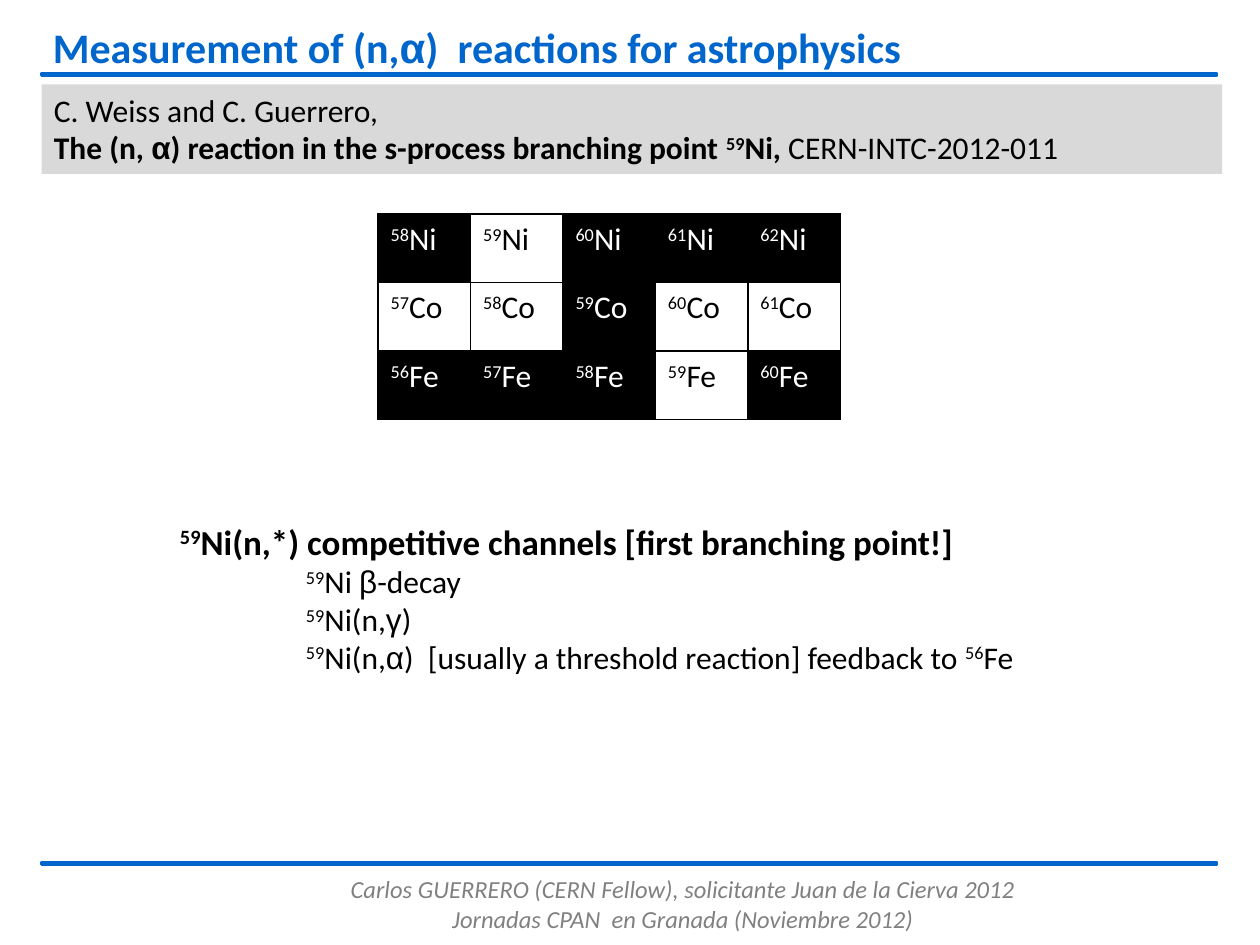
from itertools import groupby
from lxml.etree import SubElement
from pptx import Presentation
from pptx.dml.color import RGBColor
from pptx.enum.shapes import MSO_SHAPE
from pptx.enum.text import MSO_ANCHOR, PP_ALIGN
from pptx.oxml.ns import qn
from pptx.util import Inches, Pt

BLUE, BLACK, WHITE, GRAY, SILVER = "0066CC", "000000", "FFFFFF", "808080", "D9D9D9"


def color(value):
    return RGBColor.from_string(value)


def write(para, text, size, ink=BLACK, bold=False, italic=False):
    # Text between carets is superscript; Greek letters are set in Arial.
    for index, part in enumerate(text.split("^")):
        for greek, letters in groupby(part, lambda letter: letter in "αβγ"):
            span = para.add_run()
            span.text = "".join(letters)
            span.font.name = "Arial" if greek else "Calibri"
            span.font.size = Pt(size)
            span.font.bold = bold
            span.font.italic = italic
            span.font.color.rgb = color(ink)
            if index % 2:
                span.font._element.set("baseline", "30000")


deck = Presentation()
deck.slide_width, deck.slide_height = Inches(10), Inches(7.5)
page = deck.slides.add_slide(deck.slide_layouts[6])

for top, height, fill, border in [(6.84, 0.02, BLUE, True), (0.58, 0.02, BLUE, True), (0.67, 0.71, SILVER, False)]:
    width = 9.33 if border else 9.37
    bar = page.shapes.add_shape(MSO_SHAPE.RECTANGLE, Inches(0.33), Inches(top), Inches(width), Inches(height))
    bar.shadow.inherit = False
    bar.fill.solid()
    bar.fill.fore_color.rgb = color(fill)
    if border:
        bar.line.color.rgb = color(fill)
        bar.line.width = Pt(1.5)
    else:
        bar.line.fill.background()

reference = bar.text_frame
reference.word_wrap = True
reference.vertical_anchor = MSO_ANCHOR.TOP
author, paper = reference.paragraphs[0], reference.add_paragraph()
author.alignment = paper.alignment = PP_ALIGN.JUSTIFY
write(author, "C. Weiss and C. Guerrero,", 18)
write(paper, "The (n, α) reaction in the s-process branching point ^59^Ni, ", 18, bold=True)
write(paper, "CERN-INTC-2012-011", 18)

title = page.shapes.add_textbox(Inches(0.33), Inches(0.17), Inches(9.37), Inches(0.42)).text_frame
title.word_wrap = True
title.margin_left = title.margin_right = Inches(0.09)
title.margin_top = title.margin_bottom = Inches(0.04)
title.paragraphs[0].line_spacing = 0.93
write(title.paragraphs[0], "Measurement of (n,α)  reactions for astrophysics", 24, BLUE, bold=True)

footer = page.shapes.add_textbox(Inches(1.42), Inches(6.89), Inches(8), Inches(0.62)).text_frame
footer.word_wrap = True
footer.margin_bottom = Inches(0.1)
event, venue = footer.paragraphs[0], footer.add_paragraph()
event.alignment = venue.alignment = PP_ALIGN.CENTER
write(event, "Carlos GUERRERO (CERN Fellow), solicitante Juan de la Cierva 2012", 14, GRAY, italic=True)
write(venue, "Jornadas CPAN  en Granada (Noviembre 2012)", 14, GRAY, italic=True)

elements = [("Ni", 58, {58, 60, 61, 62}), ("Co", 57, {59}), ("Fe", 56, {56, 57, 58, 60})]
nuclides = page.shapes.add_table(3, 5, Inches(3), Inches(1.7), Inches(3.67), Inches(1.63)).table
for column in nuclides.columns:
    column.width = Inches(3.67 / 5)
for row, (symbol, first_mass, dark_masses) in enumerate(elements):
    nuclides.rows[row].height = Inches(1.63 / 3)
    for column in range(5):
        mass = first_mass + column
        dark = mass in dark_masses
        cell = nuclides.cell(row, column)
        write(cell.text_frame.paragraphs[0], f"^{mass}^{symbol}", 18, WHITE if dark else BLACK)
        properties = cell._tc.get_or_add_tcPr()
        for side in ("a:lnL", "a:lnR", "a:lnT", "a:lnB"):
            edge = SubElement(properties, qn(side), w=str(Pt(1)))
            SubElement(SubElement(edge, qn("a:solidFill")), qn("a:srgbClr"), val=BLACK)
        cell.fill.solid()
        cell.fill.fore_color.rgb = color(BLACK if dark else WHITE)

channels = page.shapes.add_textbox(Inches(1.33), Inches(4.08), Inches(6.92), Inches(1.35)).text_frame
channels.word_wrap = True
write(channels.paragraphs[0], "^59^Ni(n,*) competitive channels [first branching point!]", 20, bold=True)
for channel in ["^59^Ni β-decay", "^59^Ni(n,γ)", "^59^Ni(n,α)  [usually a threshold reaction] feedback to ^56^Fe"]:
    para = channels.add_paragraph()
    para._p.get_or_add_pPr().set("marL", str(Inches(1)))
    write(para, channel, 18)

deck.save("out.pptx")
